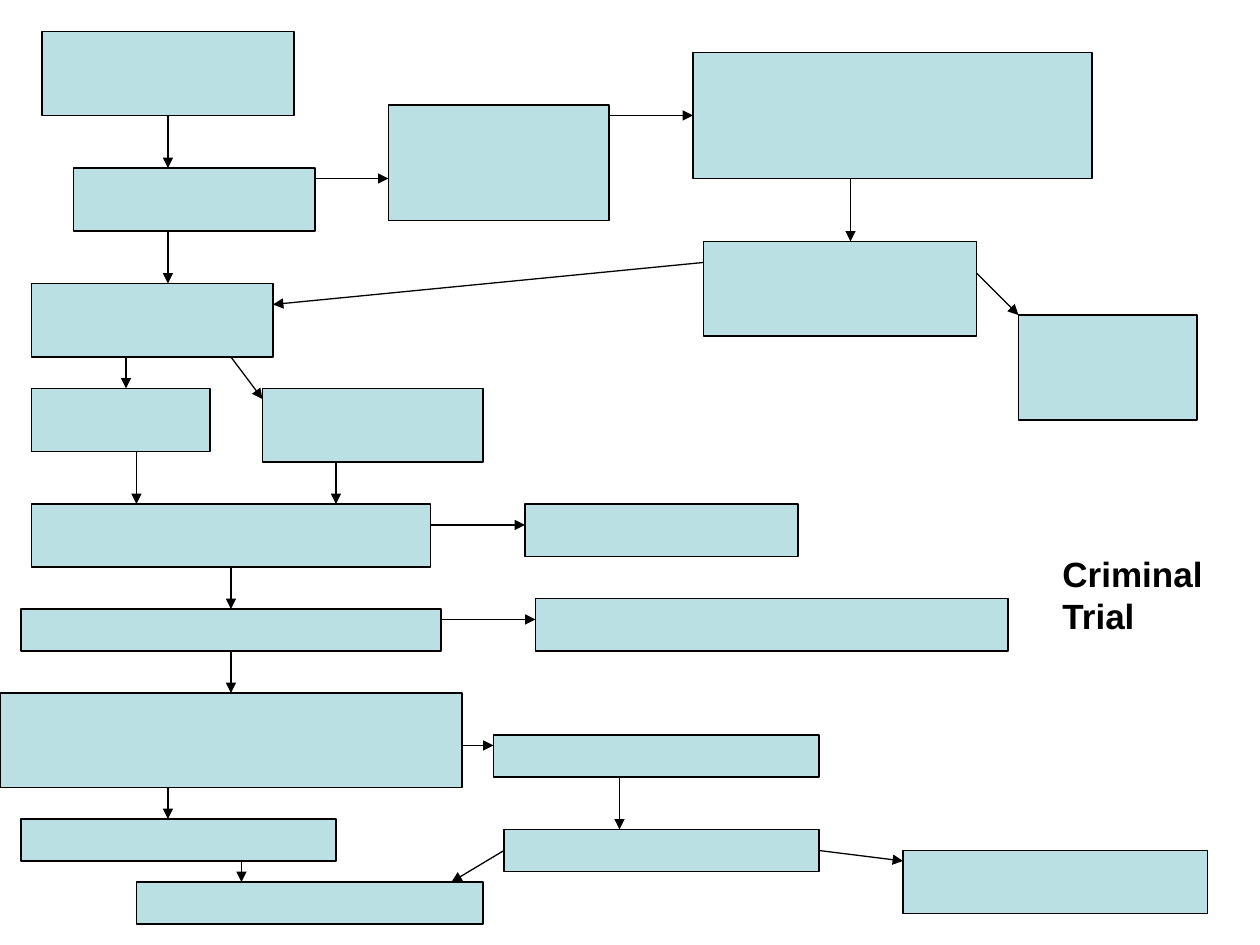
from lxml.etree import SubElement
from pptx import Presentation
from pptx.dml.color import RGBColor
from pptx.enum.shapes import MSO_CONNECTOR as Connector, MSO_SHAPE as Shape
from pptx.oxml.ns import qn
from pptx.util import Inches, Pt

BLACK = RGBColor(0x00, 0x00, 0x00)
PALE_TEAL = RGBColor(0xBB, 0xE0, 0xE3)
LINE_WIDTH = Pt(0.75)

# All places are counted in grid steps of a twelfth of an inch.
STEPS_PER_INCH = 12

# Boxes: left, top, width, height
PROCESS_BOXES = [(4, 3, 24, 8), (37, 10, 21, 11)]
PLAIN_BOXES = [
    # Upper right branch
    (66, 5, 38, 12), (67, 23, 26, 9), (97, 30, 17, 10),
    # Main column and its side boxes
    (7, 16, 23, 6), (3, 27, 23, 7), (3, 37, 17, 6), (25, 37, 21, 7),
    (3, 48, 38, 6), (50, 48, 26, 5), (2, 58, 40, 4), (51, 57, 45, 5),
    # Closing stages
    (0, 66, 44, 9), (2, 78, 30, 4), (47, 70, 31, 4),
    (48, 79, 30, 4), (13, 84, 33, 4), (86, 81, 29, 6),
]

# Arrows: from x, from y, to x, to y
ARROWS = [
    # Down the main column
    (16, 11, 16, 16), (16, 22, 16, 27), (12, 34, 12, 37), (22, 34, 25, 38),
    (13, 43, 13, 48), (32, 44, 32, 48), (22, 54, 22, 58), (22, 62, 22, 66),
    (16, 75, 16, 78), (23, 82, 23, 84),
    # Upper right branch and back
    (30, 17, 37, 17), (58, 11, 66, 11), (81, 17, 81, 23),
    (93, 26, 97, 30), (67, 25, 26, 29),
    # Lower side branches
    (41, 50, 50, 50), (42, 59, 51, 59), (44, 71, 47, 71),
    (59, 74, 59, 79), (48, 81, 43, 84), (78, 81, 86, 82),
]


def steps(*counts):
    return [Inches(count / STEPS_PER_INCH) for count in counts]


def add_box(slide, place, kind=Shape.RECTANGLE):
    shape = slide.shapes.add_shape(kind, *steps(*place))
    shape.shadow.inherit = False
    shape.fill.solid()
    shape.fill.fore_color.rgb = PALE_TEAL
    shape.line.color.rgb = BLACK
    shape.line.width = LINE_WIDTH


def add_arrow(slide, ends):
    arrow = slide.shapes.add_connector(Connector.STRAIGHT, *steps(*ends))
    arrow.line.color.rgb = BLACK
    arrow.line.width = LINE_WIDTH
    SubElement(arrow.line._get_or_add_ln(), qn("a:tailEnd"), type="triangle")
    SubElement(arrow._element.spPr, qn("a:effectLst"))


def add_text(slide, text, place, *, size, color=BLACK, bold=False, font="Arial"):
    text_frame = slide.shapes.add_textbox(*steps(*place)).text_frame
    text_frame.word_wrap = True
    text_frame.text = text
    for paragraph in text_frame.paragraphs:
        paragraph.font.name = font
        paragraph.font.size = Pt(size)
        paragraph.font.bold = bold
        paragraph.font.color.rgb = color


def main():
    presentation = Presentation()
    presentation.slide_width = Inches(10)
    presentation.slide_height = Inches(7.5)
    slide = presentation.slides.add_slide(presentation.slide_layouts[6])

    # Flowchart
    for place in PROCESS_BOXES:
        add_box(slide, place, Shape.FLOWCHART_PROCESS)
    for place in PLAIN_BOXES:
        add_box(slide, place)
    for ends in ARROWS:
        add_arrow(slide, ends)

    # Title
    add_text(slide, "Criminal\nTrial", (100, 52, 16, 15.25), size=20, bold=True)

    presentation.save("out.pptx")


if __name__ == "__main__":
    main()
